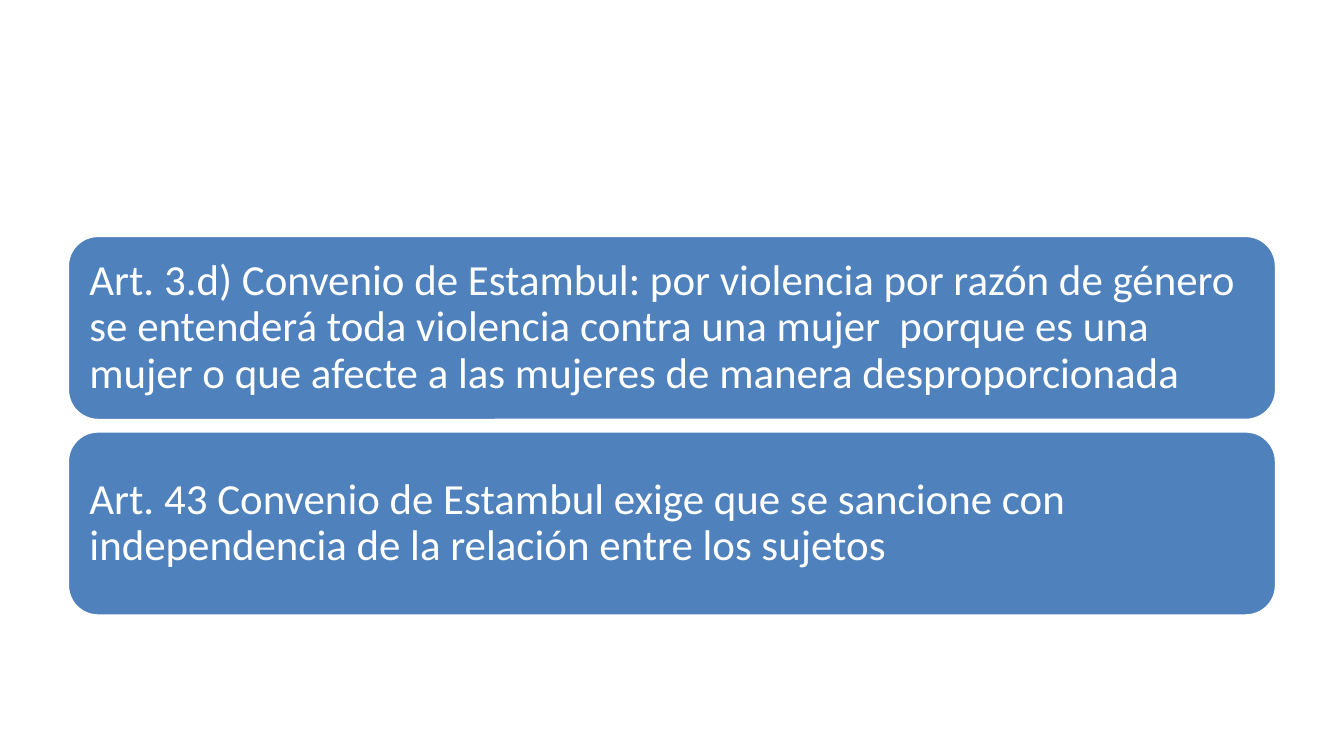
"""Build a slide with two stacked boxes on the Istanbul Convention."""
from dataclasses import dataclass

import pptx
import pptx.dml.color
import pptx.enum.shapes
import pptx.enum.text
import pptx.util

EMU_PER_PX = 4572
SLIDE_WIDTH, SLIDE_HEIGHT = 2000, 1125
BOX_LEFT, FIRST_TOP = 100, 350
BOX_WIDTH, BOX_HEIGHT, BOX_GAP = 1800, 276, 15
BOX_INSET = 20

ARTICLES = (
    "Art. 3.d) Convenio de Estambul: por violencia por razón de género "
    "se entenderá toda violencia contra una mujer  porque es una mujer "
    "o que afecte a las mujeres de manera desproporcionada",
    "Art. 43 Convenio de Estambul exige que se sancione con "
    "independencia de la relación entre los sujetos",
)


@dataclass(frozen=True)
class Theme:
    fill: str = "4F81BD"
    light: str = "FFFFFF"
    font: str = "Calibri"
    text_size: int = 23
    outline: int = 2
    line_spacing: float = 0.9
    space_after: int = 8


THEME = Theme()


def px(length):
    return pptx.util.Emu(length * EMU_PER_PX)


def colour(value):
    return pptx.dml.color.RGBColor.from_string(value)


def write_article(box, text):
    frame = box.text_frame
    frame.word_wrap = True
    frame.vertical_anchor = pptx.enum.text.MSO_ANCHOR.MIDDLE
    frame.margin_left = frame.margin_right = px(BOX_INSET)
    frame.margin_top = frame.margin_bottom = px(BOX_INSET)
    para = frame.paragraphs[0]
    para.alignment = pptx.enum.text.PP_ALIGN.LEFT
    para.line_spacing = THEME.line_spacing
    para.space_after = pptx.util.Pt(THEME.space_after)
    span = para.add_run()
    span.text = text
    span.font.name = THEME.font
    span.font.size = pptx.util.Pt(THEME.text_size)
    span.font.color.rgb = colour(THEME.light)


def add_article_box(page, top, text):
    box = page.shapes.add_shape(
        pptx.enum.shapes.MSO_SHAPE.ROUNDED_RECTANGLE,
        px(BOX_LEFT), px(top), px(BOX_WIDTH), px(BOX_HEIGHT),
    )
    box.shadow.inherit = False
    box.fill.solid()
    box.fill.fore_color.rgb = colour(THEME.fill)
    box.line.color.rgb = colour(THEME.light)
    box.line.width = pptx.util.Pt(THEME.outline)
    write_article(box, text)


def main():
    deck = pptx.Presentation()
    deck.slide_width, deck.slide_height = px(SLIDE_WIDTH), px(SLIDE_HEIGHT)
    page = deck.slides.add_slide(deck.slide_layouts[6])
    for row, text in enumerate(ARTICLES):
        add_article_box(page, FIRST_TOP + row * (BOX_HEIGHT + BOX_GAP), text)
    deck.save("out.pptx")


if __name__ == "__main__":
    main()
